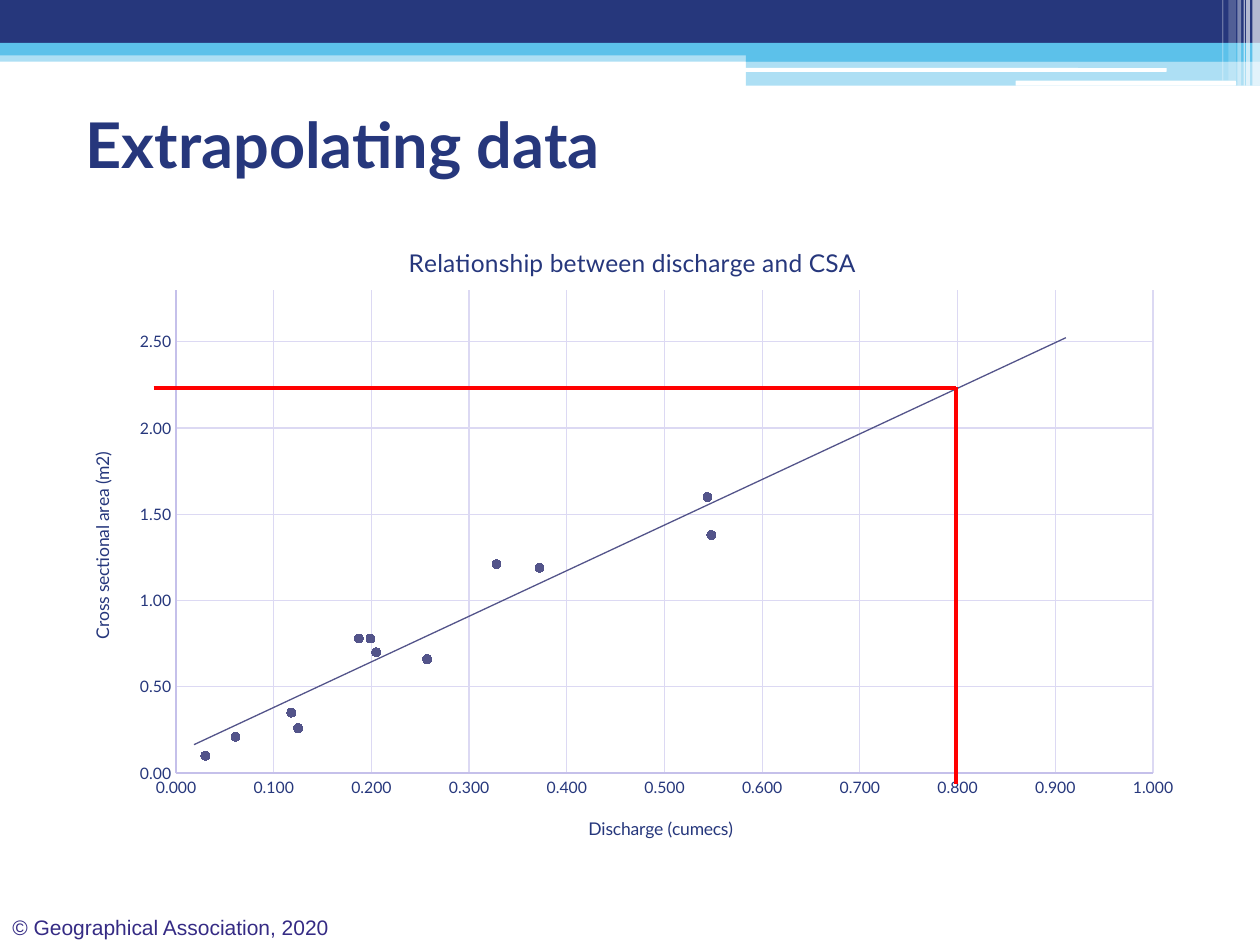
from lxml import etree
from pptx import Presentation, util as u
from pptx.chart.data import XyChartData
from pptx.dml.color import RGBColor
from pptx.enum import chart as ch, shapes, text
from pptx.oxml.ns import qn

NAVY = RGBColor(0x26, 0x37, 0x7C)
SKY = RGBColor(0x5C, 0xC1, 0xEA)
WHITE = RGBColor(0xFF, 0xFF, 0xFF)
INDIGO = RGBColor(0x35, 0x2B, 0x84)
SLATE = RGBColor(0x53, 0x54, 0x8A)
AXIS = RGBColor(0xC5, 0xC0, 0xEA)
GRID = RGBColor(0xDC, 0xD9, 0xF3)
RED = RGBColor(0xFF, 0, 0)

prs = Presentation()
prs.slide_width, prs.slide_height = u.Inches(10), u.Inches(7.5)
COL, ROW = prs.slide_width / 100, prs.slide_height / 75
slide = prs.slides.add_slide(prs.slide_layouts[5])


def cells(left, top, width, height):
    """Turn grid columns and rows into slide lengths."""
    return [int(left * COL), int(top * ROW), int(width * COL), int(height * ROW)]


def set_layout(parent, index, **shares):
    """Fix a chart part's place as shares of the chart."""
    for old in parent.findall(qn("c:layout")):
        parent.remove(old)
    layout = etree.Element(qn("c:layout"))
    parent.insert(index, layout)
    manual = etree.SubElement(layout, qn("c:manualLayout"))
    for tag, value in shares.items():
        etree.SubElement(manual, qn("c:" + tag)).set("val", str(value))


# Banner: bands, white rules and the fading stripes at the right
RECT, ROUND = shapes.MSO_SHAPE.RECTANGLE, shapes.MSO_SHAPE.ROUNDED_RECTANGLE
banner = [
    (RECT, (0, 4, 100, 0.9), SKY, 50),
    (RECT, (0, 0, 100, 3.4), NAVY, 100),
    (RECT, (0, 3.4, 100, 1), SKY, 100),
    (RECT, (59.2, 3.9, 40.8, 1), SKY, 100),
    (RECT, (59.2, 4.8, 40.8, 2), SKY, 50),
    (ROUND, (59.1, 5.4, 33.5, 0.3), WHITE, 100),
    (ROUND, (80.6, 6.4, 17.5, 0.4), WHITE, 100),
    (RECT, (99.4, 0, 0.6, 6.8), WHITE, 65),
    (RECT, (98.9, 0, 0.3, 6.8), WHITE, 65),
    (RECT, (98.7, 0, 0.1, 6.8), WHITE, 60),
    (RECT, (98.2, 0, 0.3, 6.8), WHITE, 40),
    (RECT, (97.5, 0, 0.6, 6.4), WHITE, 20),
    (RECT, (97, 0, 0.1, 6.4), WHITE, 30),
]
for preset, place, color, opacity in banner:
    band = slide.shapes.add_shape(preset, *cells(*place))
    band.shadow.inherit = False
    band.line.fill.background()
    band.fill.solid()
    band.fill.fore_color.rgb = color
    if opacity < 100:
        tint = band.fill._xPr.find(".//" + qn("a:srgbClr"))
        etree.SubElement(tint, qn("a:alpha")).set("val", str(opacity * 1000))

# Copyright line
credit = slide.shapes.add_textbox(*cells(0, 72.1, 28.7, 3)).text_frame
credit.word_wrap = True
credit.text = "© Geographical Association, 2020"
font = credit.paragraphs[0].font
font.name, font.size, font.color.rgb = "Arial", u.Pt(12), INDIGO

# Title
title = slide.shapes.title
title.left, title.top, title.width, title.height = cells(5.8, 5.5, 90, 11.7)
title.text_frame.text = "Extrapolating data"
title.text_frame.vertical_anchor = text.MSO_ANCHOR.MIDDLE
heading = title.text_frame.paragraphs[0]
heading.alignment = text.PP_ALIGN.LEFT
font = heading.font
font.name, font.size, font.bold, font.color.rgb = "Lato", u.Pt(36), True, NAVY

# Scatter chart of river sites: discharge, cross sectional area
sites = [(0.030, 0.10), (0.125, 0.26), (0.187, 0.78), (0.061, 0.21),
         (0.372, 1.19), (0.205, 0.70), (0.257, 0.66), (0.118, 0.35),
         (0.199, 0.78), (0.548, 1.38), (0.544, 1.60), (0.328, 1.21)]
data = XyChartData()
series_data = data.add_series("Series 1")
for discharge, area in sites:
    series_data.add_data_point(discharge, area)
chart = slide.shapes.add_chart(
    ch.XL_CHART_TYPE.XY_SCATTER, *cells(5.1, 17, 89.9, 51.7), data).chart
chart.has_legend = False
chart.font.name, chart.font.size, chart.font.color.rgb = "Arial", u.Pt(10), INDIGO
chart.plots[0].vary_by_categories = False

points = chart.plots[0].series[0]
points.smooth = False
points.format.line.fill.background()
points.marker.style, points.marker.size = ch.XL_MARKER_STYLE.CIRCLE, 5
points.marker.format.fill.solid()
points.marker.format.fill.fore_color.rgb = SLATE
points.marker.format.line.color.rgb = SLATE

# Axes
axes = [(chart.category_axis, "Discharge (cumecs)", 1, 0.1, "0.000"),
        (chart.value_axis, "Cross sectional area (m2)", 2.8, 0.5, "0.00")]
for axis, label, top, step, digits in axes:
    axis.minimum_scale, axis.maximum_scale, axis.major_unit = 0, top, step
    axis.major_tick_mark = axis.minor_tick_mark = ch.XL_TICK_MARK.NONE
    axis.has_major_gridlines = True
    for line, color in ((axis.format.line, AXIS),
                        (axis.major_gridlines.format.line, GRID)):
        line.color.rgb, line.width = color, u.Pt(0.75)
    axis.tick_labels.number_format = digits
    axis.tick_labels.number_format_is_linked = False
    font = axis.tick_labels.font
    font.name, font.size, font.color.rgb = "Lato", u.Pt(9), NAVY
    axis.axis_title.text_frame.text = label

# Chart and axis titles, each with its place in the chart
chart.chart_title.text_frame.text = "Relationship between discharge and CSA"
captions = [(chart.chart_title, 14, 0.3, 0.04),
            (chart.category_axis.axis_title, 10, 0.46, 0.92),
            (chart.value_axis.axis_title, 10, 0.02, 0.36)]
for caption, size, x, y in captions:
    font = caption.text_frame.paragraphs[0].font
    font.name, font.size, font.bold, font.color.rgb = "Lato", u.Pt(size), False, NAVY
    set_layout(caption.text_frame._txBody.getparent().getparent(), 1,
               xMode="edge", yMode="edge", x=x, y=y)
set_layout(chart.element.find(".//" + qn("c:plotArea")), 0, layoutTarget="inner",
           xMode="edge", yMode="edge", x=0.0987, y=0.1166, w=0.8625, h=0.7415)

# Best-fit line, then the reading lines up from 0.8 and across to the area
lines = [((15.4, 59.1), (84.6, 26.8), SLATE, 0.75),
         ((75.9, 62.2), (75.9, 30.7), RED, 2.25),
         ((12.2, 30.8), (75.9, 30.8), RED, 2.25)]
for start, end, color, weight in lines:
    rule = slide.shapes.add_connector(
        shapes.MSO_CONNECTOR.STRAIGHT, *cells(*start, *end))
    rule.line.color.rgb, rule.line.width = color, u.Pt(weight)
    etree.SubElement(rule.element.spPr, qn("a:effectLst"))

prs.save("out.pptx")
